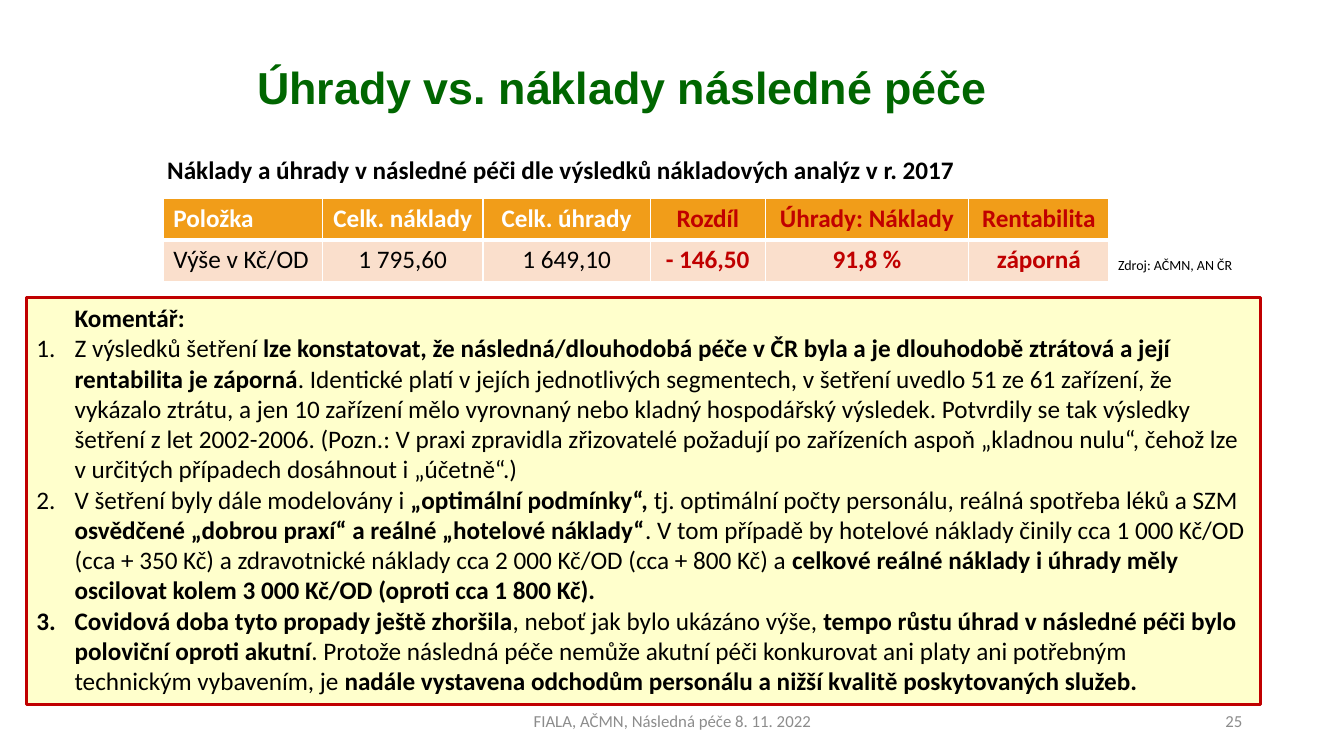
"""Build the slide comparing payments and costs of follow-up care."""
from lxml.etree import SubElement
from pptx import Presentation
from pptx.dml.color import RGBColor
from pptx.enum.text import MSO_ANCHOR as Anchor, MSO_AUTO_SIZE as AutoSize, PP_ALIGN as Align
from pptx.oxml.ns import qn
from pptx.util import Pt

PX = 9144
COLORS = {
    "title": "006600", "header": "F19D19", "row": "FADFCC", "note": "FFFFCC",
    "red": "C00000", "white": "FFFFFF", "black": "000000", "gray": "8C8C8C",
}


def add_run(paragraph, text, size, color="black", bold=False, font="Calibri"):
    run = paragraph.add_run()
    run.text = text
    run.font.name = font
    run.font.size = Pt(size)
    run.font.bold = bold
    run.font.color.rgb = RGBColor.from_string(COLORS[color])


def place(shape, left, top, width, height):
    shape.left, shape.top = left * PX, top * PX
    shape.width, shape.height = width * PX, height * PX


presentation = Presentation()
presentation.slide_width = 1333 * PX
presentation.slide_height = 750 * PX
slide = presentation.slides.add_slide(presentation.slide_layouts[1])

title = slide.shapes.title
place(title, 92, 40, 1051, 99)
title.text_frame.auto_size = AutoSize.NONE
title.text_frame.vertical_anchor = Anchor.MIDDLE
heading = title.text_frame.paragraphs[0]
heading.alignment = Align.CENTER
heading.line_spacing = 0.9
add_run(heading, "Úhrady vs. náklady následné péče", 32, "title", True, "Arial")

column_widths = [158, 159, 166, 114, 202, 139]
table_rows = [
    ["Položka", "Celk. náklady", "Celk. úhrady", "Rozdíl", "Úhrady: Náklady", "Rentabilita"],
    ["Výše v Kč/OD", "1 795,60", "1 649,10", "- 146,50", "91,8 %", "záporná"],
]
row_styles = [("header", "white", True), ("row", "black", False)]
border_widths = [
    {"a:lnL": 1, "a:lnR": 1, "a:lnT": 1, "a:lnB": 3},
    {"a:lnL": 1, "a:lnR": 1, "a:lnT": 3, "a:lnB": 1},
]
table = slide.shapes.add_table(2, 6, 162 * PX, 197 * PX, sum(column_widths) * PX, 82 * PX).table
for column, width in zip(table.columns, column_widths):
    column.width = width * PX
for row_index, row_texts in enumerate(table_rows):
    fill, row_color, row_bold = row_styles[row_index]
    for column_index, text in enumerate(row_texts):
        cell = table.cell(row_index, column_index)
        properties = cell._tc.get_or_add_tcPr()
        for tag, width in border_widths[row_index].items():
            border = SubElement(properties, qn(tag), w=str(Pt(width)))
            border_fill = SubElement(border, qn("a:solidFill"))
            SubElement(border_fill, qn("a:srgbClr"), val=COLORS["white"])
        cell.fill.solid()
        cell.fill.fore_color.rgb = RGBColor.from_string(COLORS[fill])
        paragraph = cell.text_frame.paragraphs[0]
        paragraph.alignment = Align.CENTER if column_index else Align.LEFT
        result = column_index > 2
        add_run(paragraph, text, 18, "red" if result else row_color, result or row_bold)

labels = [
    ("Náklady a úhrady v následné péči dle výsledků nákladových analýz v r. 2017",
     (156, 148, 808, 40), 18, "black", True, Align.LEFT, Anchor.TOP, False),
    ("Zdroj: AČMN, AN ČR",
     (1099, 250, 135, 27), 10, "black", False, Align.LEFT, Anchor.TOP, False),
    ("FIALA, AČMN, Následná péče 8. 11. 2022",
     (442, 695, 450, 40), 12, "gray", False, Align.CENTER, Anchor.MIDDLE, True),
    ("25", (942, 695, 300, 40), 12, "gray", False, Align.RIGHT, Anchor.MIDDLE, True),
]
for text, box, size, color, bold, alignment, anchor, wrap in labels:
    label = slide.shapes.add_textbox(*[length * PX for length in box])
    label.text_frame.word_wrap = wrap
    label.text_frame.vertical_anchor = anchor
    paragraph = label.text_frame.paragraphs[0]
    paragraph.alignment = alignment
    add_run(paragraph, text, size, color, bold)

comments = [
    [("Komentář:", True)],
    [("Z výsledků šetření ", False),
     ("lze konstatovat, že následná/dlouhodobá péče v ČR byla a je dlouhodobě ztrátová "
      "a její rentabilita je záporná", True),
     (". Identické platí v jejích jednotlivých segmentech, v šetření uvedlo 51 ze 61 zařízení, "
      "že vykázalo ztrátu, a jen 10 zařízení mělo vyrovnaný nebo kladný hospodářský výsledek. "
      "Potvrdily se tak výsledky šetření z let 2002-2006. (Pozn.: V praxi zpravidla zřizovatelé "
      "požadují po zařízeních aspoň „kladnou nulu“, čehož lze v určitých případech dosáhnout "
      "i „účetně“.)", False)],
    [("V šetření byly dále modelovány i ", False),
     ("„optimální podmínky“, ", True),
     ("tj. optimální počty personálu, reálná spotřeba léků a SZM ", False),
     ("osvědčené „dobrou praxí“ a reálné „hotelové náklady“", True),
     (". V tom případě by hotelové náklady činily cca 1 000 Kč/OD (cca + 350 Kč) "
      "a zdravotnické náklady cca 2 000 Kč/OD (cca + 800 Kč) a ", False),
     ("celkové reálné náklady i úhrady měly oscilovat kolem 3 000 Kč/OD "
      "(oproti cca 1 800 Kč).", True)],
    [("Covidová doba tyto propady ještě zhoršila", True),
     (", neboť jak bylo ukázáno výše, ", False),
     ("tempo růstu úhrad v následné péči bylo poloviční oproti akutní", True),
     (". Protože následná péče nemůže akutní péči konkurovat ani platy ani potřebným "
      "technickým vybavením, je ", False),
     ("nadále vystavena odchodům personálu a nižší kvalitě poskytovaných služeb.", True)],
]
commentary = slide.placeholders[1]
place(commentary, 26, 295, 1224, 404)
commentary.fill.solid()
commentary.fill.fore_color.rgb = RGBColor.from_string(COLORS["note"])
commentary.line.color.rgb = RGBColor.from_string(COLORS["red"])
commentary.line.width = Pt(2.25)
frame = commentary.text_frame
frame.auto_size = AutoSize.NONE
frame.vertical_anchor = Anchor.TOP
for index, runs in enumerate(comments):
    paragraph = frame.add_paragraph() if index else frame.paragraphs[0]
    paragraph.alignment = Align.LEFT
    paragraph.space_before = Pt(0)
    properties = paragraph._p.get_or_add_pPr()
    properties.set("marL", str(38 * PX))
    properties.set("indent", str(-38 * PX if index else 0))
    if index:
        SubElement(properties, qn("a:buFont"), typeface="+mj-lt")
        SubElement(properties, qn("a:buAutoNum"), type="arabicPeriod")
    else:
        SubElement(properties, qn("a:buNone"))
    for text, bold in runs:
        add_run(paragraph, text, 18, bold=bold)

presentation.save("out.pptx")
